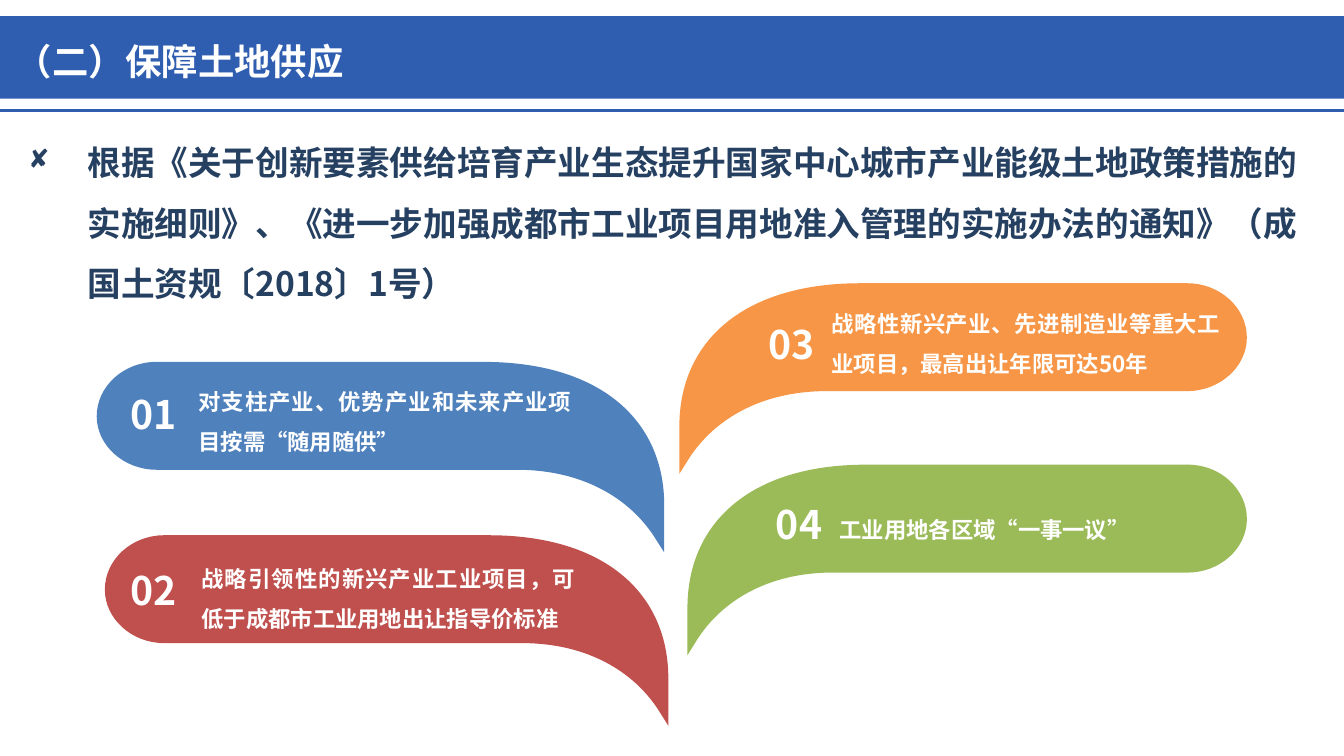
import pptx
import pptx.util
import pptx.dml.color
import pptx.enum.shapes
import pptx.enum.text
import pptx.oxml.ns
import lxml.etree

PX = 9144  # EMU in one px, 100 px to the inch
WIDE, HIGH = 4000 / 3, 750  # 16:9 page
FONT = "Noto Sans CJK SC"
WHITE, NAVY, BLUE = "FFFFFF", "254061", "2F5EB0"
ALIGN = pptx.enum.text.PP_ALIGN
ANCHOR = pptx.enum.text.MSO_ANCHOR

# Leaf outline: x as a share of the width, y in px; three points make a curve
START = (0.105, 107)
LEAF = [
    [(0.74, 107)],
    [(0.858, 107), (0.939, 136), (0.982, 173)],
    [(1, 189)],
    [(1, 142)],
    [(1, 59), (0.89, 0), (0.681, 0)],
    [(0.105, 0)],
    [(0.048, 0), (0, 24), (0, 54)],
    [(0, 83), (0.048, 107), START],
]

# Round end x, tip x, top y, colour, number, number box, text, text box
ITEMS = [
    (96, 659, 359, "4F81BD", "01", (120, 382, 101, 75),
     "对支柱产业、优势产业和未来产业项目按需“随用随供”", (187, 367, 390, 91)),
    (104, 663, 531, "C0504D", "02", (120, 557, 87, 75),
     "战略引领性的新兴产业工业项目，可低于成都市工业用地出让指导价标准",
     (190, 542, 391, 91)),
    (1237, 674, 281, "F79646", "03", (753, 313, 101, 75),
     "战略性新兴产业、先进制造业等重大工业项目，最高出让年限可达50年",
     (815, 289, 406, 91)),
    (1237, 682, 461, "9BBB59", "04", (760, 491, 99, 75),
     "工业用地各区域“一事一议”", (823, 494, 331, 50)),
]


def rgb(code):
    return pptx.dml.color.RGBColor.from_string(code)


def emu(*vals):
    return [pptx.util.Emu(round(v * PX)) for v in vals]


def sub(node, tag, **attrs):
    return lxml.etree.SubElement(node, pptx.oxml.ns.qn(tag), attrs)


def paint(shape, hue):
    shape.shadow.inherit = False
    shape.fill.solid()
    shape.fill.fore_color.rgb = rgb(hue)
    shape.line.fill.background()


def text(slide, box, words, size, hue=WHITE, space=1.0, align=ALIGN.LEFT,
         anchor=ANCHOR.TOP, bullet=None):
    frame = slide.shapes.add_textbox(*emu(*box)).text_frame
    frame.word_wrap = True
    frame.vertical_anchor = anchor
    para = frame.paragraphs[0]
    para.alignment = align
    para.line_spacing = space
    if bullet:
        props = para._p.get_or_add_pPr()
        hang = 59 * PX
        props.set("marL", str(hang))
        props.set("indent", str(-hang))
        sub(props, "a:buFont", typeface="Wingdings", charset="2")
        sub(props, "a:buChar", char=bullet)
    run = para.add_run()
    run.text = words
    run.font.size = pptx.util.Pt(size)
    run.font.bold = True
    run.font.name = FONT
    run.font.color.rgb = rgb(hue)
    sub(run._r.get_or_add_rPr(), "a:ea", typeface=FONT)


def bend(shape):
    """Join the straight steps of each three-point part into one curve."""
    steps = iter(list(shape._element.iter(pptx.oxml.ns.qn("a:lnTo"))))
    for part in LEAF:
        group = [next(steps) for _ in part]
        if len(group) == 3:
            arc = lxml.etree.Element(pptx.oxml.ns.qn("a:cubicBezTo"))
            group[0].addprevious(arc)
            for step in group:
                arc.append(step[0])
                step.getparent().remove(step)


def leaf(slide, end, tip, top, hue):
    dots = [START] + [dot for part in LEAF for dot in part]
    spots = [emu(end + x * (tip - end), top + y) for x, y in dots]
    form = slide.shapes.build_freeform(*spots[0], scale=1.0)
    form.add_line_segments(spots[1:], close=True)
    shape = form.convert_to_shape()
    bend(shape)
    paint(shape, hue)


def head(slide):
    kind = pptx.enum.shapes.MSO_SHAPE.RECTANGLE
    paint(slide.shapes.add_shape(kind, *emu(0, 16, WIDE, 82)), BLUE)
    kind = pptx.enum.shapes.MSO_CONNECTOR.STRAIGHT
    rule = slide.shapes.add_connector(kind, *emu(0, 110, WIDE, 110))
    rule.line.color.rgb = rgb(BLUE)
    rule.line.width = pptx.util.Pt(2.25)
    sub(rule._element.spPr, "a:effectLst")


def main():
    deck = pptx.Presentation()
    deck.slide_width, deck.slide_height = emu(WIDE, HIGH)
    slide = deck.slides.add_slide(deck.slide_layouts[6])

    # Title band and policy basis
    head(slide)
    text(slide, (18, 116, 1289, 192),
         "根据《关于创新要素供给培育产业生态提升国家中心城市产业能级土地政策措施的"
         "实施细则》、《进一步加强成都市工业项目用地准入管理的实施办法的通知》"
         "（成国土资规〔2018〕1号）",
         24, NAVY, 1.5, bullet="◻")
    text(slide, (6, 20, 511, 72), "（二）保障土地供应", 26, space=1.2,
         anchor=ANCHOR.MIDDLE)

    # Four measures
    for end, tip, top, hue, num, spot, words, box in ITEMS:
        leaf(slide, end, tip, top, hue)
        text(slide, box, words, 16, space=1.5, align=ALIGN.JUSTIFY)
        text(slide, spot, num, 28)

    deck.save("out.pptx")


if __name__ == "__main__":
    main()
